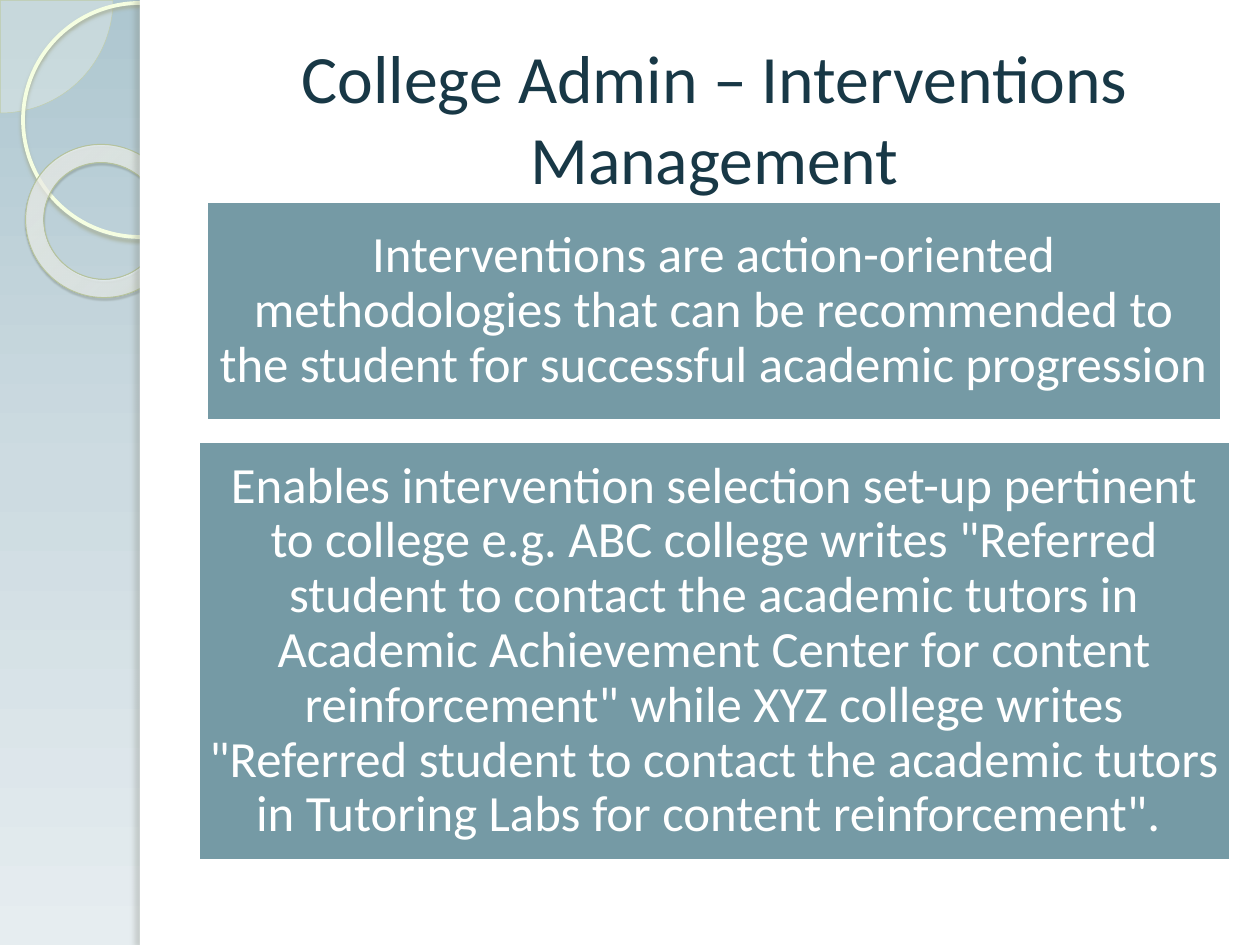
from dataclasses import dataclass

from lxml.etree import SubElement
from pptx import Presentation
from pptx.dml.color import RGBColor
from pptx.enum.shapes import MSO_SHAPE
from pptx.enum.text import MSO_ANCHOR, PP_ALIGN
from pptx.oxml import parse_xml
from pptx.oxml.ns import qn
from pptx.util import Emu, Pt

PX = 914400 / 126
WIDTH, HEIGHT = 1260, 945
DRAWING = "http://schemas.openxmlformats.org/drawingml/2006/main"


@dataclass(frozen=True)
class Theme:
    font: str = "Calibri"
    title_size: float = 38.7
    body_size: float = 29
    title: str = "183846"
    white: str = "FFFFFF"
    box: str = "759AA5"
    # Gradient stops: position, colour, opacity (all percentages)
    background: tuple = ((0, "AEC7D0", 100), (50, "CDDBE1", 100), (100, "E6EDF0", 100))
    donut: tuple = ((0, "FCFEF7", 70), (70, "FEFFFB", 55), (100, "CEE59D", 60))
    pie: str = "FAFDF5"
    pie_line: str = "C2CEA9"
    ring_line: str = "F5FEE1"
    donut_line: str = "B6C39C"
    # Shadows: colour, opacity, blur and distance in points, angle
    ring_shadow: tuple = ("A6AE96", 85, 2, 2, 90)
    donut_shadow: tuple = ("535948", 35, 1, 1.2, 75)
    edge_shadow: tuple = ("6F7367", 25, 3, 3, 180)


def px(length):
    return Emu(round(length * PX))


def gradient(stops, direction):
    marks = "".join(
        f'<a:gs pos="{position * 1000}"><a:srgbClr val="{color}">'
        f'<a:alpha val="{opacity * 1000}"/></a:srgbClr></a:gs>'
        for position, color, opacity in stops
    )
    return parse_xml(
        f'<a:gradFill xmlns:a="{DRAWING}" rotWithShape="1">'
        f"<a:gsLst>{marks}</a:gsLst>{direction}</a:gradFill>"
    )


class SlideBuilder:
    LINEAR_DOWN = '<a:lin ang="5400000" scaled="0"/>'
    CIRCLE = ('<a:path path="circle"><a:fillToRect l="-408000" t="-50000" '
              'r="508000" b="150000"/></a:path>')

    def __init__(self, slide, theme):
        self.slide = slide
        self.theme = theme

    def background(self, stops):
        self.slide.background.fill.solid()
        properties = self.slide.element.xpath(".//p:bgPr")[0]
        properties.replace(properties[0], gradient(stops, self.LINEAR_DOWN))

    def shape(self, kind, box, fill=None, opacity=100, line=None, line_width=1,
              shadow=None, adjustments=(), rotation=0):
        shape = self.slide.shapes.add_shape(kind, *map(px, box))
        shape.rotation = rotation
        for index, value in enumerate(adjustments):
            shape.adjustments[index] = value
        self.fill(shape, fill, opacity)
        if line:
            shape.line.color.rgb = RGBColor.from_string(line)
            shape.line.width = Pt(line_width)
        else:
            shape.line.fill.background()
        shape.shadow.inherit = False
        if shadow:
            self.shadow(shape, *shadow)
        return shape

    def fill(self, shape, fill, opacity):
        if fill is None:
            shape.fill.background()
            return
        shape.fill.solid()
        properties = shape.element.spPr
        solid = properties.find(qn("a:solidFill"))
        if isinstance(fill, tuple):
            properties.replace(solid, gradient(fill, self.CIRCLE))
            return
        shape.fill.fore_color.rgb = RGBColor.from_string(fill)
        if opacity < 100:
            color = solid.find(qn("a:srgbClr"))
            SubElement(color, qn("a:alpha"), val=str(opacity * 1000))

    def shadow(self, shape, color, opacity, blur, distance, angle):
        effects = shape.element.spPr.find(qn("a:effectLst"))
        outer = SubElement(
            effects, qn("a:outerShdw"), blurRad=str(Pt(blur)), dist=str(Pt(distance)),
            dir=str(angle * 60000), algn="ctr", rotWithShape="0",
        )
        shade = SubElement(outer, qn("a:srgbClr"), val=color)
        SubElement(shade, qn("a:alpha"), val=str(opacity * 1000))

    def add_text(self, shape, text, size, color, line_spacing=None):
        frame = shape.text_frame
        frame.word_wrap = True
        frame.vertical_anchor = MSO_ANCHOR.MIDDLE
        paragraph = frame.paragraphs[0]
        paragraph.alignment = PP_ALIGN.CENTER
        paragraph.line_spacing = line_spacing
        run = paragraph.add_run()
        run.text = text
        run.font.name = self.theme.font
        run.font.size = Pt(size)
        run.font.color.rgb = RGBColor.from_string(color)

    def title(self, box, text):
        shape = self.slide.shapes.add_textbox(*map(px, box))
        self.add_text(shape, text, self.theme.title_size, self.theme.title)

    def text_box(self, box, text):
        theme = self.theme
        shape = self.shape(MSO_SHAPE.RECTANGLE, box, theme.box, line=theme.white, line_width=2)
        frame = shape.text_frame
        frame.margin_left = frame.margin_right = px(10)
        frame.margin_top = frame.margin_bottom = px(10)
        self.add_text(shape, text, theme.body_size, theme.white, 0.9)


def main():
    presentation = Presentation()
    presentation.slide_width = px(WIDTH)
    presentation.slide_height = px(HEIGHT)
    theme = Theme()
    builder = SlideBuilder(presentation.slides.add_slide(presentation.slide_layouts[6]), theme)

    # Side decoration
    builder.background(theme.background)
    builder.shape(MSO_SHAPE.PIE, (-112, -112, 225, 225), theme.pie, 33,
                  theme.pie_line, 0.25, adjustments=(0, 54))
    builder.shape(MSO_SHAPE.OVAL, (23, 3, 234, 234), line=theme.ring_line,
                  line_width=2.15, shadow=theme.ring_shadow)
    builder.shape(MSO_SHAPE.DONUT, (25, 145, 155, 152), theme.donut, line=theme.donut_line,
                  line_width=0.58, shadow=theme.donut_shadow, adjustments=(0.12,),
                  rotation=38.6)

    # White content panel with a shaded left edge
    builder.shape(MSO_SHAPE.RECTANGLE, (140, 0, WIDTH - 140, HEIGHT), theme.white)
    builder.shape(MSO_SHAPE.RECTANGLE, (140, 0, 10, HEIGHT), theme.white,
                  shadow=theme.edge_shadow)

    # Title and text boxes
    builder.title((198, 38, 1033, 158), "College Admin – Interventions Management")
    builder.text_box(
        (206, 201, 1016, 220),
        "Interventions are action-oriented methodologies that can be recommended to "
        "the student for successful academic progression ",
    )
    builder.text_box(
        (198, 441, 1033, 420),
        "Enables intervention selection set-up pertinent to college e.g. ABC college "
        'writes "Referred student to contact the academic tutors in Academic '
        'Achievement Center for content reinforcement" while XYZ college writes '
        '"Referred student to contact the academic tutors in Tutoring Labs for '
        'content reinforcement". ',
    )

    presentation.save("out.pptx")


if __name__ == "__main__":
    main()
